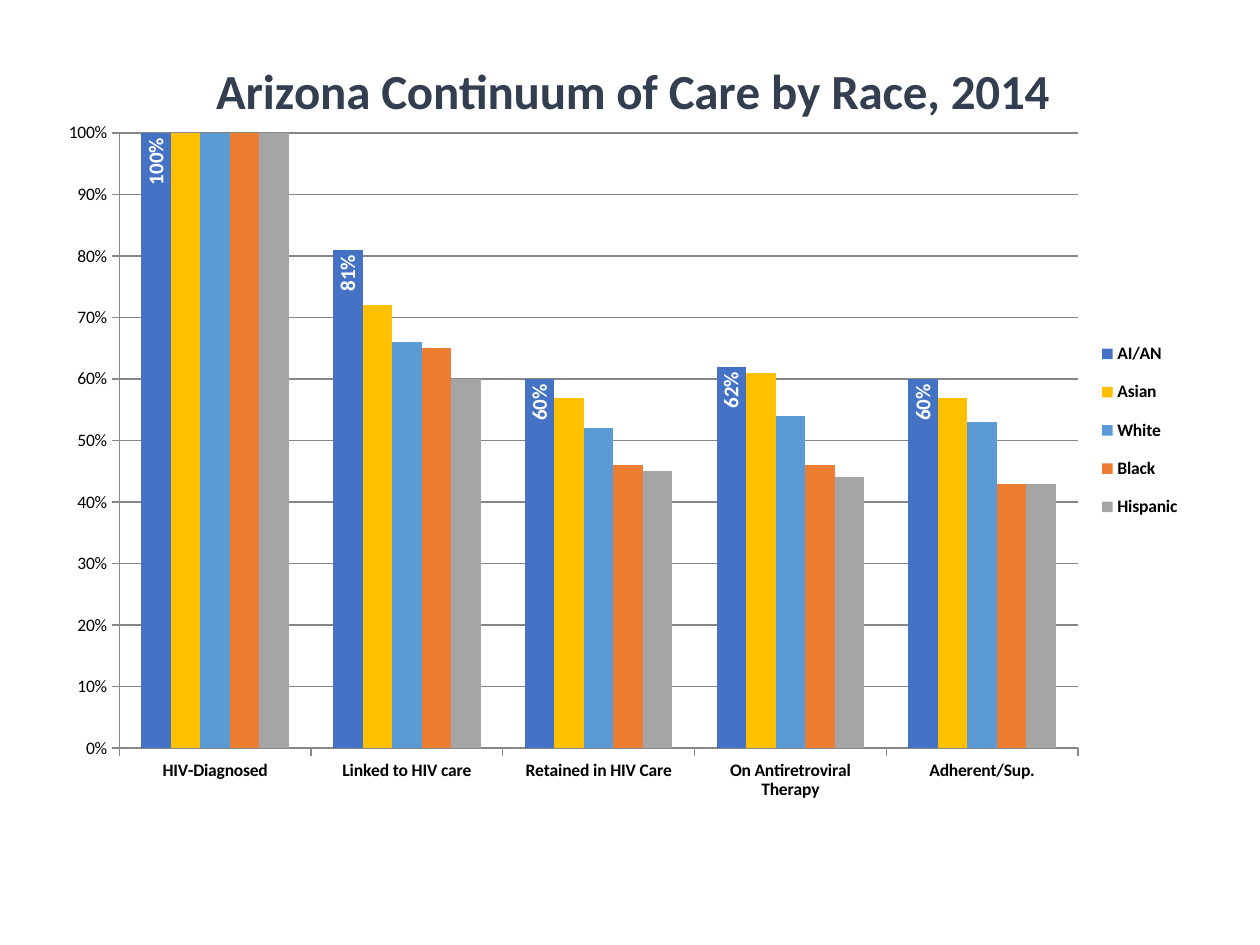
from dataclasses import dataclass

from lxml.etree import SubElement
from pptx import Presentation
from pptx.chart.data import CategoryChartData
from pptx.dml.color import RGBColor
from pptx.enum.chart import (XL_CHART_TYPE, XL_LABEL_POSITION,
                             XL_LEGEND_POSITION, XL_TICK_MARK)
from pptx.oxml.ns import qn
from pptx.util import Inches, Pt

BLACK = RGBColor(0x00, 0x00, 0x00)
WHITE = RGBColor(0xFF, 0xFF, 0xFF)
SLATE = RGBColor(0x33, 0x3F, 0x50)
GRAY = RGBColor(0x86, 0x86, 0x86)
BLUE = RGBColor(0x44, 0x72, 0xC4)
GOLD = RGBColor(0xFF, 0xC0, 0x00)
SKY = RGBColor(0x5B, 0x9B, 0xD5)
ORANGE = RGBColor(0xED, 0x7D, 0x31)
SILVER = RGBColor(0xA5, 0xA5, 0xA5)
FACE = "Calibri"
PERCENT = "0%"


@dataclass
class Group:
    name: str
    rates: tuple[float, ...]
    color: RGBColor


STAGES = ("HIV-Diagnosed", "Linked to HIV care", "Retained in HIV Care",
          "On Antiretroviral Therapy", "Adherent/Sup.")
GROUPS = (
    Group("AI/AN", (1, 0.81, 0.6, 0.62, 0.6), BLUE),
    Group("Asian", (1, 0.72, 0.57, 0.61, 0.57), GOLD),
    Group("White", (1, 0.66, 0.52, 0.54, 0.53), SKY),
    Group("Black", (1, 0.65, 0.46, 0.46, 0.43), ORANGE),
    Group("Hispanic", (1, 0.6, 0.45, 0.44, 0.43), SILVER),
)


def style(font, size: float = 10, color: RGBColor = BLACK,
          bold: bool = False) -> None:
    font.name = FACE
    font.size = Pt(size)
    font.bold = bold
    font.color.rgb = color


def write(frame, text: str, **form) -> None:
    run = frame.paragraphs[0].add_run()
    run.text = text
    style(run.font, **form)


def place(part, index: int, inner: bool = False, **shares: float) -> None:
    for old in part.findall(qn("c:layout")):
        part.remove(old)
    layout = part.makeelement(qn("c:layout"), {})
    manual = SubElement(layout, qn("c:manualLayout"))
    marks = {"layoutTarget": "inner"} if inner else {}
    marks |= {"xMode": "edge", "yMode": "edge"} | shares
    for tag, value in marks.items():
        SubElement(manual, qn(f"c:{tag}")).set("val", str(value))
    part.insert(index, layout)


def add_bars(slide, wide: int, high: int):
    data = CategoryChartData(number_format=PERCENT)
    data.categories = STAGES
    for group in GROUPS:
        data.add_series(group.name, group.rates)
    chart = slide.shapes.add_chart(
        XL_CHART_TYPE.COLUMN_CLUSTERED, int(wide * 0.042), int(high * 0.023),
        int(wide * 0.908), int(high * 0.824), data).chart
    style(chart.font)
    plot = chart.plots[0]
    plot.gap_width = 150
    plot.overlap = 0
    plot.vary_by_categories = False
    for group, series in zip(GROUPS, plot.series):
        series.format.fill.solid()
        series.format.fill.fore_color.rgb = group.color
        series.invert_if_negative = False
    place(chart._chartSpace.chart.plotArea, 0, inner=True,
          x=0.058, y=0.143, w=0.838, h=0.79)
    return chart


def set_axes(chart) -> None:
    rates = chart.value_axis
    rates.minimum_scale, rates.maximum_scale, rates.major_unit = 0, 1, 0.1
    rates.has_major_gridlines = True
    rates.tick_labels.number_format = PERCENT
    rates.tick_labels.number_format_is_linked = False
    stages = chart.category_axis
    for axis in (rates, stages):
        axis.major_tick_mark = XL_TICK_MARK.OUTSIDE
        axis.minor_tick_mark = XL_TICK_MARK.NONE
        style(axis.tick_labels.font, bold=axis is stages)
    for part in (rates, stages, rates.major_gridlines):
        part.format.line.color.rgb = GRAY
        part.format.line.width = Pt(0.75)


def set_labels(series) -> None:
    labels = series.data_labels
    labels.show_value = True
    labels.number_format = PERCENT
    labels.number_format_is_linked = False
    labels.position = XL_LABEL_POSITION.INSIDE_END
    style(labels.font, size=12, color=WHITE, bold=True)
    body = labels._element.find(".//" + qn("a:bodyPr"))
    body.set("rot", "-5400000")
    body.set("vert", "horz")


def set_title(chart) -> None:
    chart.has_title = True
    title = chart.chart_title
    write(title.text_frame, "Arizona Continuum of Care by Race, 2014",
          size=28, color=SLATE, bold=True)
    place(title._element, 1, x=0.135, y=0.035)


def set_legend(chart) -> None:
    chart.has_legend = True
    legend = chart.legend
    legend.position = XL_LEGEND_POSITION.RIGHT
    legend.include_in_layout = False
    style(legend.font, bold=True)
    place(legend._element, 1, x=0.91, y=0.39, w=0.08, h=0.27)


def main() -> None:
    deck = Presentation()
    deck.slide_width, deck.slide_height = Inches(10), Inches(7.5)
    slide = deck.slides.add_slide(deck.slide_layouts[6])
    chart = add_bars(slide, deck.slide_width, deck.slide_height)
    set_axes(chart)
    set_labels(chart.plots[0].series[0])
    set_title(chart)
    set_legend(chart)
    deck.save("out.pptx")


if __name__ == "__main__":
    main()
